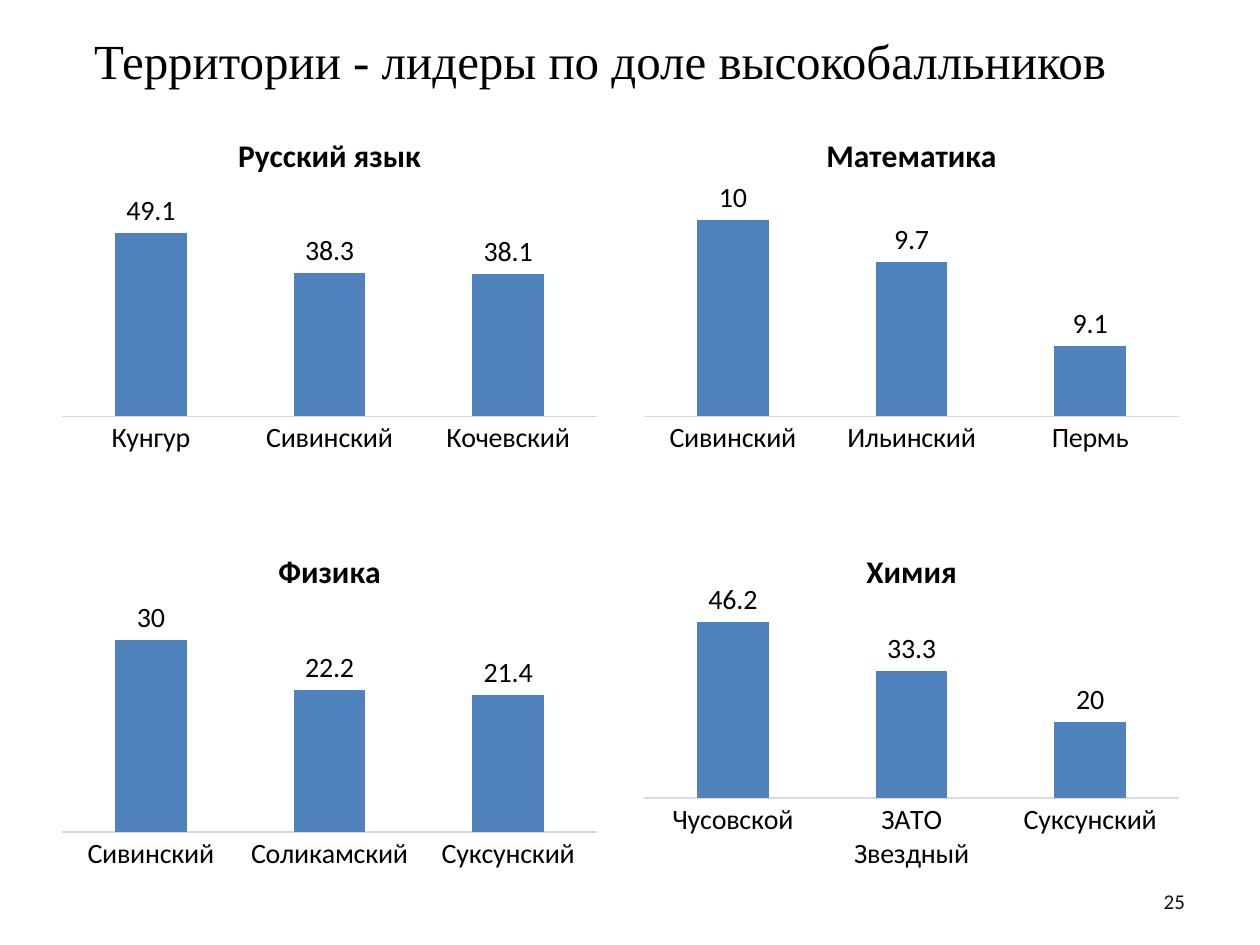
from pptx import Presentation
from pptx.chart.data import CategoryChartData
from pptx.dml.color import RGBColor
from pptx.enum.chart import XL_CHART_TYPE, XL_LABEL_POSITION, XL_TICK_MARK
from pptx.enum.text import MSO_ANCHOR, PP_ALIGN
from pptx.util import Pt

COLUMNS = XL_CHART_TYPE.COLUMN_CLUSTERED
OUTSIDE_END = XL_LABEL_POSITION.OUTSIDE_END
NO_TICK = XL_TICK_MARK.NONE
MIDDLE = MSO_ANCHOR.MIDDLE
CENTER = PP_ALIGN.CENTER
RIGHT = PP_ALIGN.RIGHT

BLACK = "000000"
BODY_FONT = "Calibri"
LEFT, TOP = 28.8, 65.5
CHART_WIDTH, CHART_HEIGHT = 319, 198.7
COLUMN_STEP, ROW_STEP = 332.6, 237.6

SUBJECTS = [
    ("Русский язык", {"Кунгур": 49.1, "Сивинский": 38.3, "Кочевский": 38.1}, 0, 60),
    ("Математика", {"Сивинский": 10, "Ильинский": 9.7, "Пермь": 9.1}, 8.6, 10.2),
    ("Физика", {"Сивинский": 30, "Соликамский": 22.2, "Суксунский": 21.4}, 0, 35),
    ("Химия", {"Чусовской": 46.2, "ЗАТО Звездный": 33.3, "Суксунский": 20}, 0, 50),
]


def color(value):
    return RGBColor.from_string(value)


def style_font(font, size, name=BODY_FONT, value=BLACK, bold=False):
    font.size = Pt(size)
    font.name = name
    font.bold = bold
    font.color.rgb = color(value)


def write_line(frame, text, align, size, name, value):
    frame.word_wrap = True
    frame.vertical_anchor = MIDDLE
    paragraph = frame.paragraphs[0]
    paragraph.alignment = align
    run = paragraph.add_run()
    run.text = text
    style_font(run.font, size, name, value)


def add_heading(slide, text):
    heading = slide.shapes.title
    heading.left, heading.top = Pt(22.3), Pt(15.8)
    heading.width, heading.height = Pt(648), Pt(37.4)
    write_line(heading.text_frame, text, CENTER, 28, "Times New Roman", BLACK)


def add_page_number(slide, number):
    box = slide.shapes.add_textbox(Pt(516.2), Pt(500.4), Pt(168), Pt(28.8))
    write_line(box.text_frame, number, RIGHT, 12, BODY_FONT, "0D0D0D")


def add_subject_chart(slide, left, top, subject, shares, low, high):
    chart_data = CategoryChartData()
    chart_data.categories = list(shares)
    chart_data.add_series("Доля высокобалльников", list(shares.values()))
    chart = slide.shapes.add_chart(
        COLUMNS, Pt(left), Pt(top), Pt(CHART_WIDTH), Pt(CHART_HEIGHT), chart_data
    ).chart
    style_font(chart.font, 10)
    chart.has_legend = False

    chart.has_title = True
    chart.chart_title.include_in_layout = False
    title_run = chart.chart_title.text_frame.paragraphs[0].add_run()
    title_run.text = subject
    style_font(title_run.font, 18, bold=True)

    territories = chart.category_axis
    territories.major_tick_mark = territories.minor_tick_mark = NO_TICK
    territories.has_major_gridlines = False
    style_font(territories.tick_labels.font, 16)
    territories.format.line.color.rgb = color("D9D9D9")
    territories.format.line.width = Pt(0.75)

    scale = chart.value_axis
    scale.visible = False
    scale.has_major_gridlines = False
    scale.minimum_scale, scale.maximum_scale = low, high

    plot = chart.plots[0]
    plot.gap_width = 150
    plot.vary_by_categories = False
    bars = plot.series[0]
    bars.format.fill.solid()
    bars.format.fill.fore_color.rgb = color("4F81BD")
    labels = bars.data_labels
    labels.show_value = True
    labels.position = OUTSIDE_END
    style_font(labels.font, 16)


def main():
    deck = Presentation()
    deck.slide_width, deck.slide_height = Pt(720), Pt(540)
    slide = deck.slides.add_slide(deck.slide_layouts[5])
    add_heading(slide, "Территории - лидеры по доле высокобалльников ")
    for index, subject in enumerate(SUBJECTS):
        row, column = divmod(index, 2)
        add_subject_chart(
            slide, LEFT + column * COLUMN_STEP, TOP + row * ROW_STEP, *subject
        )
    add_page_number(slide, "25")
    deck.save("out.pptx")


if __name__ == "__main__":
    main()
